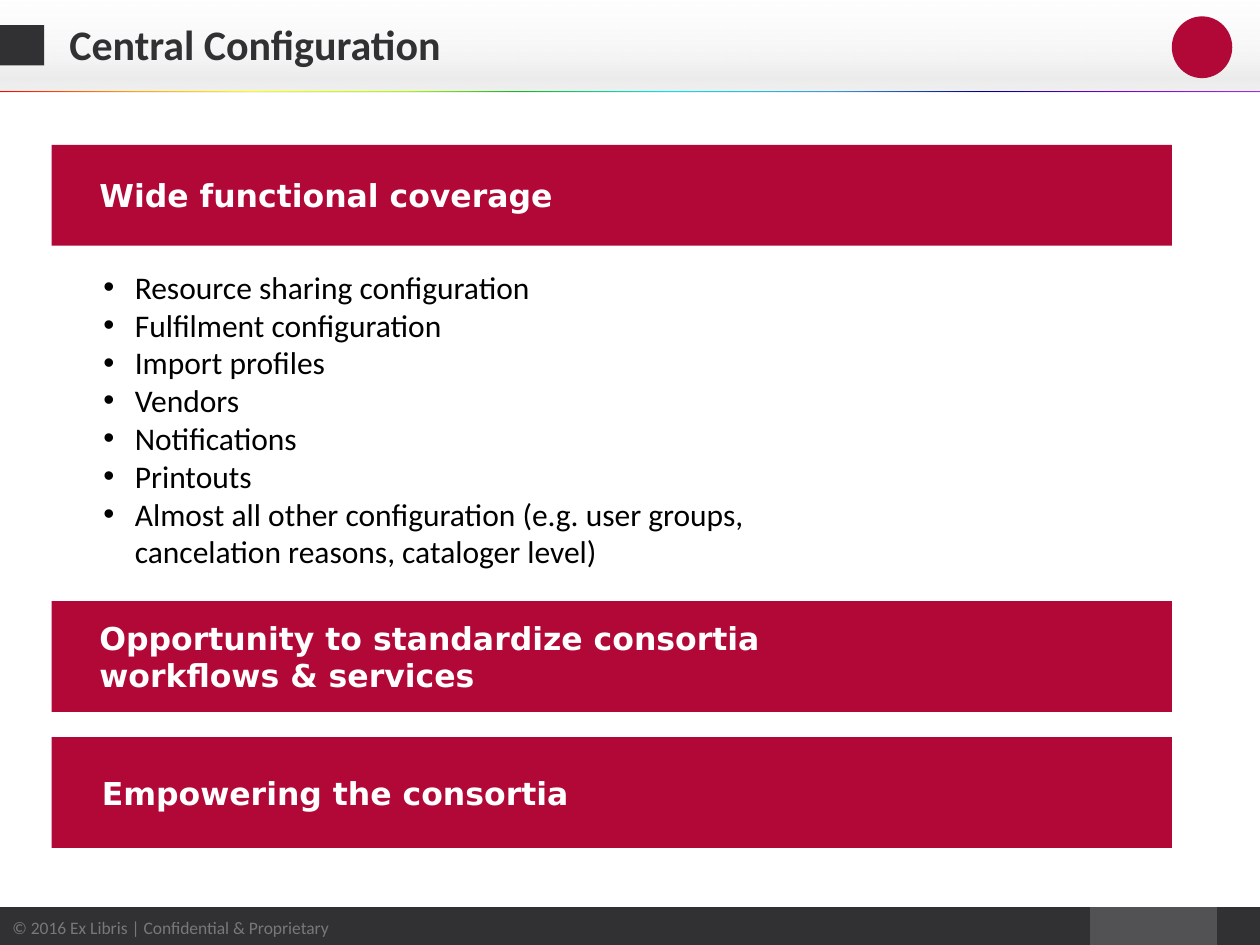
"""Build the Central Configuration slide."""
from typing import NamedTuple

from lxml.etree import SubElement
from pptx import Presentation
from pptx.dml.color import RGBColor
from pptx.enum.shapes import MSO_SHAPE
from pptx.enum.text import MSO_ANCHOR, MSO_AUTO_SIZE, PP_ALIGN
from pptx.oxml.ns import qn
from pptx.util import Emu, Inches, Pt

COLS, ROWS = 100, 75
DARK = RGBColor(0x31, 0x31, 0x33)
MID = RGBColor(0x52, 0x52, 0x54)
GREY = RGBColor(0x78, 0x78, 0x78)
RED = RGBColor(0xB2, 0x08, 0x37)
WHITE = RGBColor(0xFF, 0xFF, 0xFF)
BLACK = RGBColor(0, 0, 0)


class Box(NamedTuple):
    col: float
    row: float
    cols: float
    rows: float


class Stop(NamedTuple):
    pos: int
    color: RGBColor
    alpha: int = 100


class Band(NamedTuple):
    row: float
    rows: float
    text: str
    text_col: float
    text_row: float


HEADER_STOPS = [
    Stop(0, RGBColor(0xFA, 0xFA, 0xFA), 12),
    Stop(66, RGBColor(0xD7, 0xD7, 0xD7), 30),
    Stop(83, RGBColor(0xD7, 0xD7, 0xD7), 47),
    Stop(100, RGBColor(0xE4, 0xE4, 0xE4), 54),
]
RAINBOW_STOPS = [
    Stop(0, RGBColor(0xA2, 0x2D, 0xE8)),
    Stop(12, RGBColor(0x72, 0x00, 0xD1)),
    Stop(22, RGBColor(0x00, 0x00, 0x86)),
    Stop(34, RGBColor(0x39, 0x9C, 0xDB)),
    Stop(47, RGBColor(0x00, 0xE9, 0xE8)),
    Stop(59, RGBColor(0x11, 0xB9, 0x20)),
    Stop(68, RGBColor(0xB1, 0xF9, 0x00)),
    Stop(80, RGBColor(0xFF, 0xFF, 0x00)),
    Stop(89, RGBColor(0xFF, 0xAB, 0x00)),
    Stop(100, RGBColor(0xFF, 0x00, 0x00)),
]
BANDS = [
    Band(11.5, 8, "Wide functional coverage", 6.1, 12.1),
    Band(47.7, 8.8, "Opportunity to standardize consortia workflows & services", 6.1, 48.7),
    Band(58.5, 8.8, "Empowering the consortia", 6.3, 59.5),
]
TOPICS = [
    "Resource sharing configuration",
    "Fulfilment configuration",
    "Import profiles",
    "Vendors",
    "Notifications",
    "Printouts",
    "Almost all other configuration (e.g. user groups, cancelation reasons, cataloger level)",
]

prs = Presentation()
prs.slide_width, prs.slide_height = Inches(10), Inches(7.5)
s = prs.slides.add_slide(prs.slide_layouts[1])


def emu(box: Box) -> list[Emu]:
    """Turn grid columns and rows into slide lengths."""
    cw, rh = prs.slide_width / COLS, prs.slide_height / ROWS
    return [Emu(round(n * unit)) for n, unit in zip(box, (cw, rh, cw, rh))]


def add_shape(box: Box, color: RGBColor | None = None, kind=MSO_SHAPE.RECTANGLE):
    """Add a flat shape without outline."""
    sp = s.shapes.add_shape(kind, *emu(box))
    sp.shadow.inherit = False
    sp.line.fill.background()
    if color is not None:
        sp.fill.solid()
        sp.fill.fore_color.rgb = color
    return sp


def add_gradient(box: Box, stops: list[Stop], angle: int) -> None:
    """Add a rectangle with a linear gradient of any number of stops."""
    sp = add_shape(box)
    sp.fill.gradient()
    grad = sp.fill._xPr.find(qn("a:gradFill"))
    for child in list(grad):
        grad.remove(child)
    gs_list = SubElement(grad, qn("a:gsLst"))
    for stop in stops:
        gs = SubElement(gs_list, qn("a:gs"), pos=str(stop.pos * 1000))
        clr = SubElement(gs, qn("a:srgbClr"), val=str(stop.color))
        if stop.alpha < 100:
            SubElement(clr, qn("a:alpha"), val=str(stop.alpha * 1000))
    SubElement(grad, qn("a:lin"), ang=str(angle * 60000), scaled="0")


def place(sp, box: Box):
    """Move a placeholder to its box, in front of what is drawn so far."""
    sp.left, sp.top, sp.width, sp.height = emu(box)
    s.shapes._spTree.append(sp._element)
    return sp


def set_text(sp, lines: list[str], *, size: int, color: RGBColor, font: str = "Calibri",
             bold: bool = False, margin: float = 0, bullet: bool = False,
             level: int = 0, spacing: float = 1.0) -> None:
    """Fill a shape with left-aligned, vertically centred paragraphs."""
    tf = sp.text_frame
    tf.word_wrap = True
    tf.auto_size = MSO_AUTO_SIZE.NONE
    tf.vertical_anchor = MSO_ANCHOR.MIDDLE
    for i, line in enumerate(lines):
        p = tf.paragraphs[0] if i == 0 else tf.add_paragraph()
        p.alignment, p.level, p.line_spacing = PP_ALIGN.LEFT, level, spacing
        p.space_before = p.space_after = Pt(0)
        pPr = p._p.get_or_add_pPr()
        pPr.set("marL", str(Inches(margin)))
        pPr.set("indent", str(Inches(-margin if bullet else 0)))
        if bullet:
            SubElement(pPr, qn("a:buFont"), typeface="Arial")
            SubElement(pPr, qn("a:buChar"), char="•")
        r = p.add_run()
        r.text = line
        r.font.name, r.font.size, r.font.bold = font, Pt(size), bold
        r.font.color.rgb = color


def add_band(band: Band) -> None:
    """Add a red band and its heading."""
    sp = add_shape(Box(4.1, band.row, 88.9, band.rows), RED, MSO_SHAPE.SNIP_2_DIAG_RECTANGLE)
    sp.adjustments[0] = sp.adjustments[1] = 0
    tb = s.shapes.add_textbox(*emu(Box(band.text_col, band.text_row, 59.1, 6.8)))
    set_text(tb, [band.text], size=18, color=WHITE, font="DejaVu Sans", bold=True,
             margin=0.08, level=1)


def main() -> None:
    """Draw the slide and save it."""
    add_shape(Box(86.5, 72, 10.1, 3.2), MID)
    add_shape(Box(96.6, 72, 3.5, 3.2), DARK)
    add_gradient(Box(-0.1, 0.1, 100.1, 7.2), HEADER_STOPS, 90)
    footer = add_shape(Box(0, 72, 86.5, 3.2), DARK)
    set_text(footer, ["© 2016 Ex Libris | Confidential & Proprietary"], size=10, color=GREY)
    add_shape(Box(0, 2, 3.5, 3.2), DARK)
    add_gradient(Box(0, 7.2, 100, 0.14), RAINBOW_STOPS, 180)

    title = place(s.shapes.title, Box(4.5, 0.3, 90.6, 6.9))
    set_text(title, ["Central Configuration"], size=24, color=DARK, bold=True, spacing=0.9)
    body = place(s.placeholders[1], Box(7.2, 24.3, 55.6, 17.9))
    set_text(body, TOPICS, size=18, color=BLACK, margin=0.25, bullet=True)

    for band in BANDS:
        add_band(band)
    add_shape(Box(93, 1.3, 4.8, 4.9), RED, MSO_SHAPE.OVAL)
    prs.save("out.pptx")


if __name__ == "__main__":
    main()
